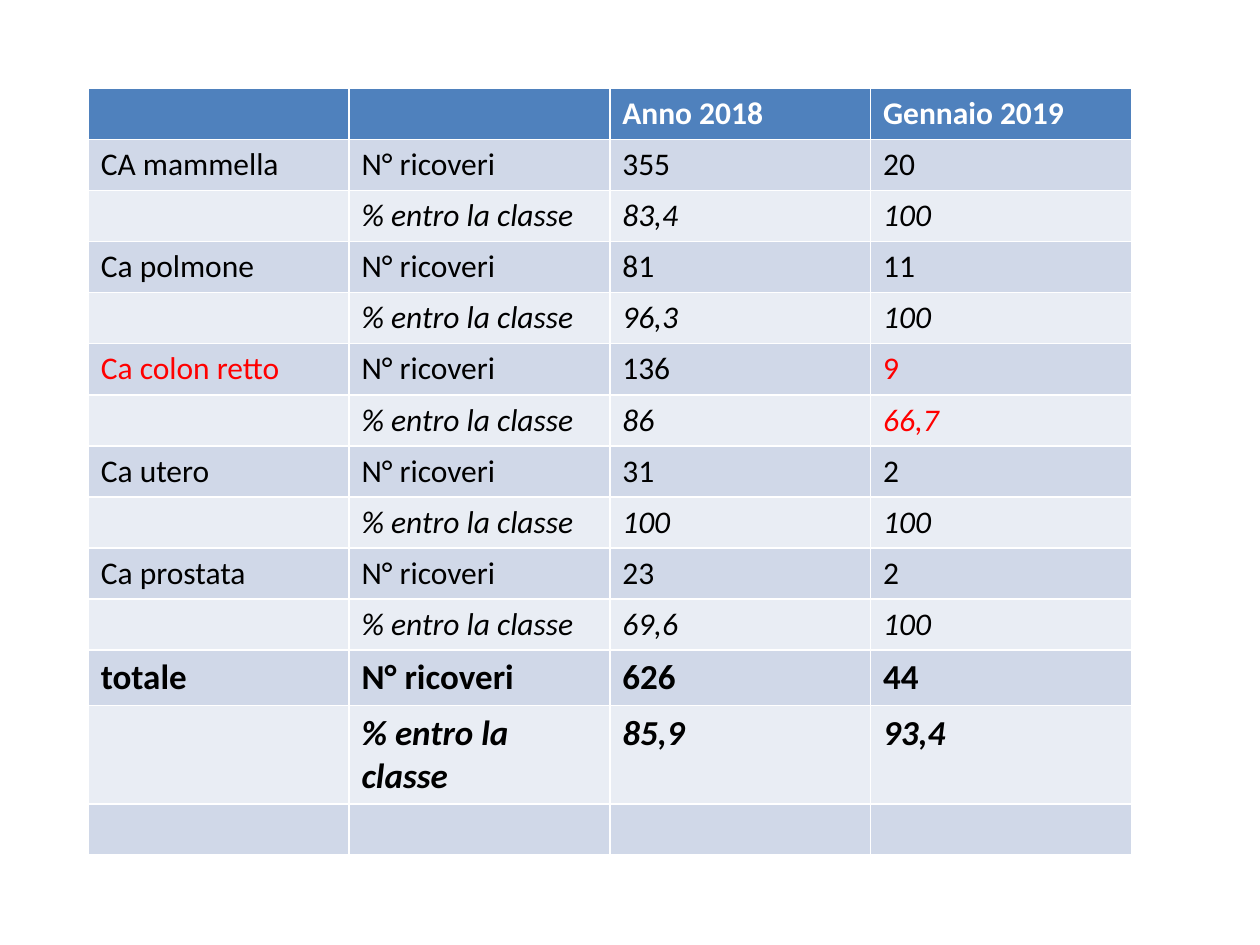
from dataclasses import dataclass

from pptx import Presentation
from pptx import util as u
from pptx.dml.color import RGBColor


@dataclass(frozen=True)
class Theme:
    font: str = "Calibri"
    body_size: int = 18
    total_size: int = 20
    heading: str = "FFFFFF"
    ink: str = "000000"
    alert: str = "FF0000"
    header_fill: str = "4F81BD"
    count_fill: str = "D0D8E8"
    share_fill: str = "E9EDF4"


THEME = Theme()
HEADINGS = ("", "", "Anno 2018", "Gennaio 2019")
ADMISSIONS = [
    ("CA mammella", ("355", "20"), ("83,4", "100")),
    ("Ca polmone", ("81", "11"), ("96,3", "100")),
    ("Ca colon retto", ("136", "9"), ("86", "66,7")),
    ("Ca utero", ("31", "2"), ("100", "100")),
    ("Ca prostata", ("23", "2"), ("69,6", "100")),
    ("totale", ("626", "44"), ("85,9", "93,4")),
]
ALERT_DIAGNOSIS = "Ca colon retto"
ALERT_COLUMNS = (0, 3)


def fill_cell(cell, wording, fill, color, **font_format):
    cell.fill.solid()
    cell.fill.fore_color.rgb = RGBColor.from_string(fill)
    paragraph = cell.text_frame.paragraphs[0]
    paragraph.font.size = u.Pt(THEME.body_size)
    if not wording:
        return
    run = paragraph.add_run()
    run.text = wording
    run.font.color.rgb = RGBColor.from_string(color)
    for attribute, value in {"name": THEME.font, **font_format}.items():
        setattr(run.font, attribute, value)


def fill_row(row, wordings, fill, colors, **font_format):
    for cell, wording, color in zip(row.cells, wordings, colors):
        fill_cell(cell, wording, fill, color, **font_format)


def admissions_table(slide, left, top, width, height):
    row_count = 2 * len(ADMISSIONS) + 2
    table = slide.shapes.add_table(
        row_count, len(HEADINGS), left, top, width, height
    ).table
    rows = iter(table.rows)
    fill_row(next(rows), HEADINGS, THEME.header_fill,
             [THEME.heading] * len(HEADINGS),
             size=u.Pt(THEME.body_size), bold=True, italic=False)

    for diagnosis, counts, shares in ADMISSIONS:
        is_total = diagnosis == "totale"
        size = u.Pt(THEME.total_size if is_total else THEME.body_size)
        colors = [
            THEME.alert
            if diagnosis == ALERT_DIAGNOSIS and column in ALERT_COLUMNS
            else THEME.ink
            for column in range(len(HEADINGS))
        ]
        fill_row(next(rows), (diagnosis, "N° ricoveri", *counts),
                 THEME.count_fill, colors,
                 size=size, bold=is_total, italic=False)
        fill_row(next(rows), ("", "% entro la classe", *shares),
                 THEME.share_fill, colors,
                 size=size, bold=is_total, italic=True)

    fill_row(next(rows), [""] * len(HEADINGS), THEME.count_fill,
             [THEME.ink] * len(HEADINGS))


def main():
    deck = Presentation()
    deck.slide_width, deck.slide_height = u.Inches(10), u.Inches(7.5)
    slide = deck.slides.add_slide(deck.slide_layouts[6])
    admissions_table(slide, u.Inches(0.7), u.Inches(0.7),
                     u.Inches(8.28), u.Inches(5.68))
    deck.save("out.pptx")


if __name__ == "__main__":
    main()
